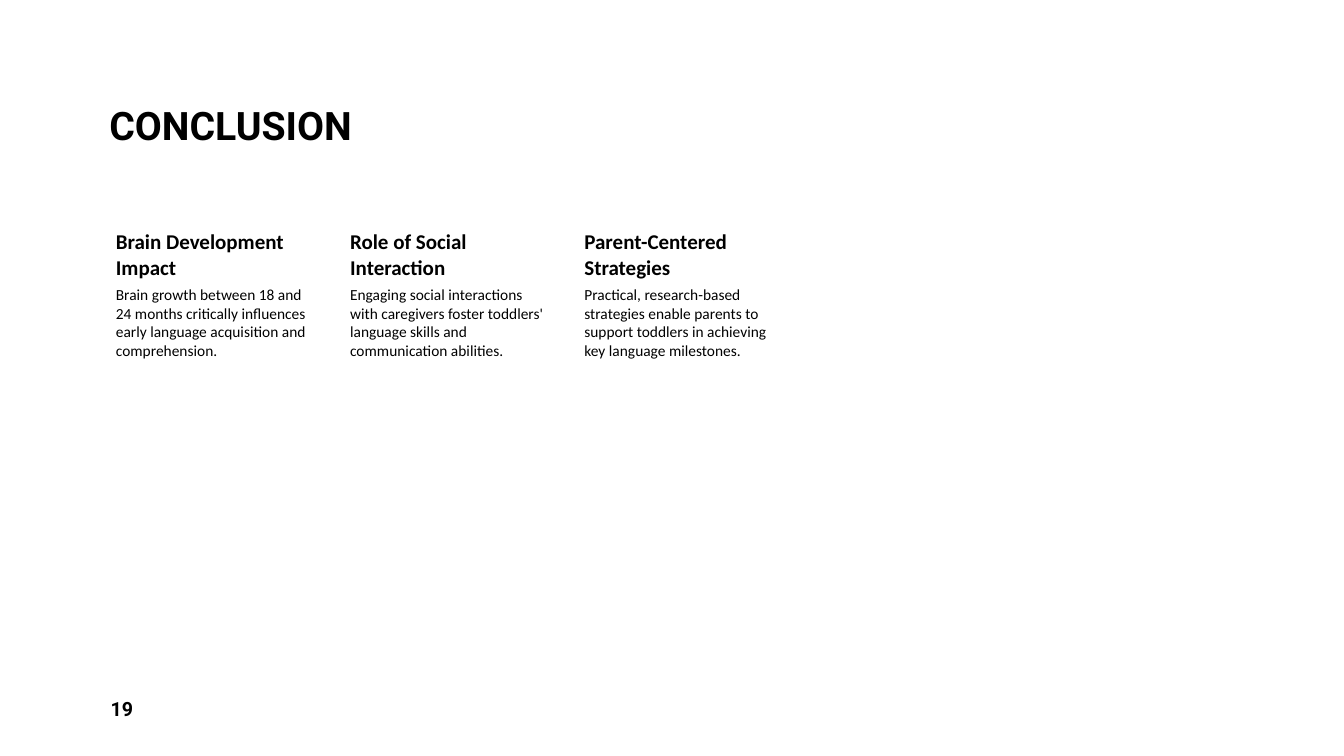
from pptx import Presentation
from pptx import util as u
from pptx.dml.color import RGBColor
from pptx.enum import text

BLACK = RGBColor(0x00, 0x00, 0x00)
WHITE = RGBColor(0xFF, 0xFF, 0xFF)

TITLE = dict(name="Roboto", size=u.Pt(28), bold=True)
HEADING = dict(name="Calibri", size=u.Pt(15), bold=True)
BODY = dict(name="Calibri", size=u.Pt(11), bold=False)
NUMBER = dict(name="Roboto", size=u.Pt(14), bold=True)

COLUMN_INSETS = dict(margin_left=u.Cm(0.38), margin_top=u.Cm(0.05),
                     margin_right=u.Cm(0.05), margin_bottom=u.Cm(0.05))

TAKEAWAYS = [
    ("Brain Development Impact",
     "Brain growth between 18 and 24 months critically influences early "
     "language acquisition and comprehension."),
    ("Role of Social Interaction",
     "Engaging social interactions with caregivers foster toddlers' "
     "language skills and communication abilities."),
    ("Parent-Centered Strategies",
     "Practical, research-based strategies enable parents to support "
     "toddlers in achieving key language milestones."),
]


def set_attrs(obj, values):
    for key, value in values.items():
        setattr(obj, key, value)


def write(sp, content, font, frame=None, para=None):
    """Fill a shape with one formatted paragraph."""
    tf = sp.text_frame
    set_attrs(tf, dict(word_wrap=True, auto_size=text.MSO_AUTO_SIZE.NONE))
    set_attrs(tf, frame or {})
    p = tf.paragraphs[0]
    set_attrs(p, dict(alignment=text.PP_ALIGN.LEFT))
    set_attrs(p, para or {})
    r = p.add_run()
    r.text = content
    set_attrs(r.font, font)
    r.font.color.rgb = BLACK


def add_title(s, left, top, width, height):
    sp = s.shapes.title
    set_attrs(sp, dict(left=left, top=top, width=width, height=height))
    write(sp, "CONCLUSION", TITLE,
          dict(vertical_anchor=text.MSO_ANCHOR.BOTTOM), dict(line_spacing=0.9))


def add_takeaways(s, left, top, width, height):
    """Equal columns, each a heading above its explanation."""
    gap, head_h = u.Cm(0.52), u.Cm(1.42)
    n = len(TAKEAWAYS)
    col_w = (width - gap * (n - 1)) // n
    for i, (heading, body) in enumerate(TAKEAWAYS):
        x = left + i * (col_w + gap)
        sp = s.shapes.add_textbox(x, top, col_w, head_h)
        write(sp, heading, HEADING, COLUMN_INSETS)
        sp = s.shapes.add_textbox(x, top + head_h, col_w, height - head_h)
        write(sp, body, BODY, COLUMN_INSETS)


def add_page_number(s, left, top, width, height):
    sp = s.shapes.add_textbox(left, top, width, height)
    write(sp, "19", NUMBER, dict(vertical_anchor=text.MSO_ANCHOR.MIDDLE),
          dict(space_after=u.Pt(6)))


def main():
    prs = Presentation()
    prs.slide_width, prs.slide_height = u.Cm(33.87), u.Cm(19.05)
    s = prs.slides.add_slide(prs.slide_layouts[5])
    s.background.fill.solid()
    s.background.fill.fore_color.rgb = WHITE

    # Title, three takeaways, page number
    add_title(s, u.Cm(2.5), u.Cm(0.2), u.Cm(28.9), u.Cm(3.68))
    add_takeaways(s, u.Cm(2.54), u.Cm(5.72), u.Cm(17.19), u.Cm(9.52))
    add_page_number(s, u.Cm(2.54), u.Cm(17.35), u.Cm(7.42), u.Cm(1.02))
    prs.save("out.pptx")


if __name__ == "__main__":
    main()
